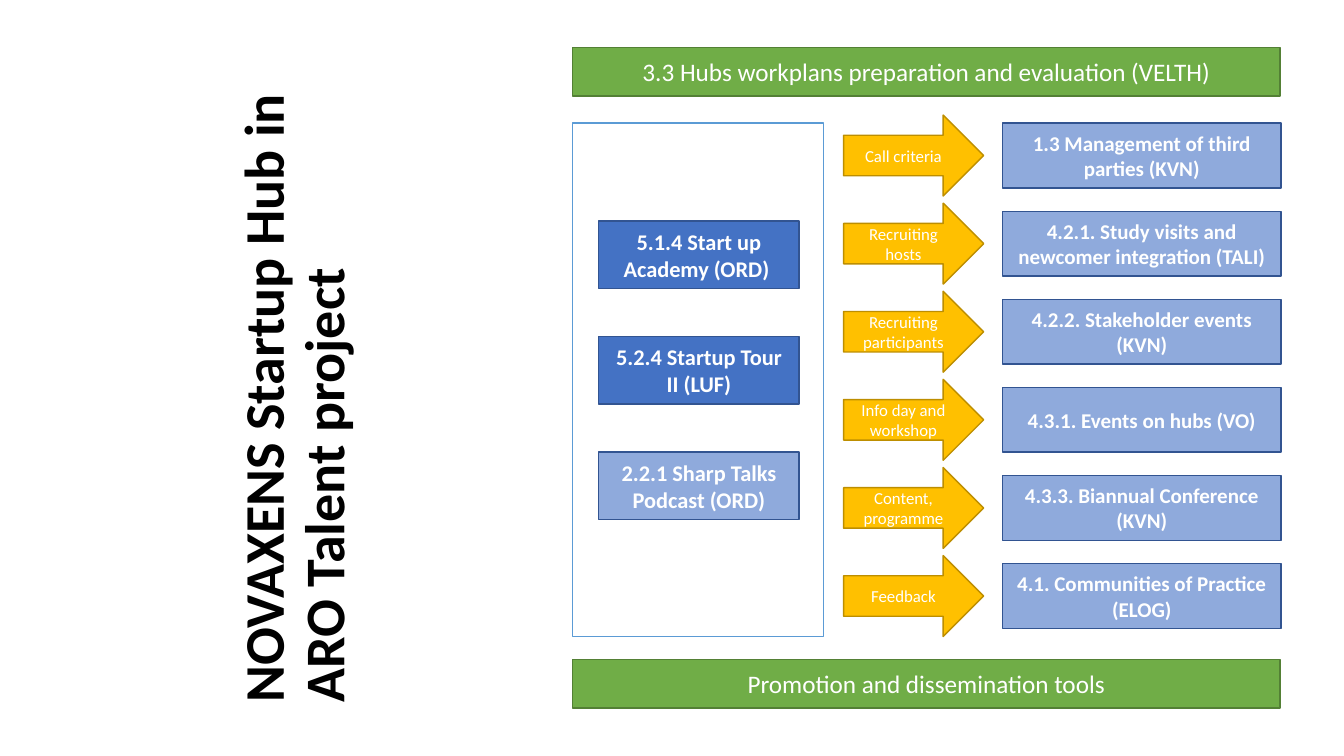
from dataclasses import dataclass

from pptx import Presentation
from pptx.dml.color import RGBColor
from pptx.enum.shapes import MSO_SHAPE
from pptx.enum.text import MSO_ANCHOR, MSO_AUTO_SIZE, PP_ALIGN
from pptx.slide import Slide
from pptx.util import Cm, Pt

COLOURS = {
    "white": "FFFFFF",
    "black": "000000",
    "frame": "5B9BD5",
    "startup": "4472C4",
    "related": "8FAADC",
    "task_edge": "325491",
    "banner": "70AD47",
    "banner_edge": "538035",
    "arrow": "FFC000",
    "arrow_edge": "BD8E00",
}
FONT = "Calibri"


@dataclass(frozen=True)
class Style:
    width: float
    height: float
    fill: str | None
    edge: str
    size: int = 12
    bold: bool = False
    outline: MSO_SHAPE = MSO_SHAPE.RECTANGLE


@dataclass(frozen=True)
class Exchange:
    label: str
    task: str


FRAME = Style(6.32, 12.93, None, "frame")
BANNER = Style(17.83, 1.22, "banner", "banner_edge", 18)
STARTUP_TASK = Style(5.05, 1.7, "startup", "task_edge", 16, True)
PODCAST_TASK = Style(5.05, 1.7, "related", "task_edge", 16, True)
PARTNER_TASK = Style(7.01, 1.63, "related", "task_edge", 15, True)
ARROW = Style(3.53, 2.04, "arrow", "arrow_edge", outline=MSO_SHAPE.RIGHT_ARROW)

LEFT_EDGE = 14.43
HUB_LEFT, HUB_MIDDLE, HUB_PITCH = 15.09, 6.42, 2.91
ARROW_LEFT, PARTNER_LEFT = 21.26, 25.27
ROW_MIDDLE, ROW_PITCH = 3.92, 2.22

BANNERS = [
    (1.81, "3.3 Hubs workplans preparation and evaluation (VELTH)"),
    (17.23, "Promotion and dissemination tools"),
]
HUB_TASKS = [
    (STARTUP_TASK, "5.1.4 Start up Academy (ORD) "),
    (STARTUP_TASK, "5.2.4 Startup Tour II (LUF)"),
    (PODCAST_TASK, "2.2.1 Sharp Talks Podcast (ORD)"),
]
EXCHANGES = [
    Exchange("Call criteria", "1.3 Management of third parties (KVN)"),
    Exchange("Recruiting hosts", "4.2.1. Study visits and newcomer integration (TALI)"),
    Exchange("Recruiting participants", "4.2.2. Stakeholder events (KVN)"),
    Exchange("Info day and workshop", "4.3.1. Events on hubs (VO)"),
    Exchange("Content, programme", "4.3.3. Biannual Conference (KVN)"),
    Exchange("Feedback", "4.1. Communities of Practice (ELOG)"),
]


def colour(name: str) -> RGBColor:
    return RGBColor.from_string(COLOURS[name])


def draw(slide: Slide, style: Style, left: float, middle: float, text: str = "") -> None:
    block = slide.shapes.add_shape(
        style.outline, Cm(left), Cm(middle - style.height / 2),
        Cm(style.width), Cm(style.height),
    )
    block.shadow.inherit = False
    block.line.color.rgb = colour(style.edge)
    block.line.width = Pt(1)
    if style.fill is None:
        block.fill.background()
    else:
        block.fill.solid()
        block.fill.fore_color.rgb = colour(style.fill)
    if text:
        block.text_frame.text = text
        block.text_frame.word_wrap = True
        block.text_frame.vertical_anchor = MSO_ANCHOR.MIDDLE
        paragraph = block.text_frame.paragraphs[0]
        paragraph.alignment = PP_ALIGN.CENTER
        paragraph.font.name = FONT
        paragraph.font.size = Pt(style.size)
        paragraph.font.bold = style.bold
        paragraph.font.color.rgb = colour("white")


def write_title(slide: Slide, text: str) -> None:
    title = slide.shapes.title
    title.left, title.top = Cm(-1.19), Cm(3.68)
    title.width, title.height = Cm(17.3), Cm(11.25)
    title.rotation = 270
    frame = title.text_frame
    frame.text = text
    frame.word_wrap = True
    frame.auto_size = MSO_AUTO_SIZE.NONE
    frame.vertical_anchor = MSO_ANCHOR.MIDDLE
    paragraph = frame.paragraphs[0]
    paragraph.alignment = PP_ALIGN.LEFT
    paragraph.line_spacing = 0.9
    paragraph.font.name = FONT
    paragraph.font.size = Pt(40)
    paragraph.font.bold = True
    paragraph.font.color.rgb = colour("black")


def main() -> None:
    presentation = Presentation()
    presentation.slide_width, presentation.slide_height = Cm(33.87), Cm(19.05)
    slide = presentation.slides.add_slide(presentation.slide_layouts.get_by_name("Title Only"))
    write_title(slide, "NOVAXENS Startup Hub in ARO Talent project")

    draw(slide, FRAME, LEFT_EDGE, 9.57)
    for middle, text in BANNERS:
        draw(slide, BANNER, LEFT_EDGE, middle, text)
    for row, (style, text) in enumerate(HUB_TASKS):
        draw(slide, style, HUB_LEFT, HUB_MIDDLE + row * HUB_PITCH, text)
    for row, exchange in enumerate(EXCHANGES):
        middle = ROW_MIDDLE + row * ROW_PITCH
        draw(slide, ARROW, ARROW_LEFT, middle, exchange.label)
        draw(slide, PARTNER_TASK, PARTNER_LEFT, middle, exchange.task)

    presentation.save("out.pptx")


if __name__ == "__main__":
    main()
